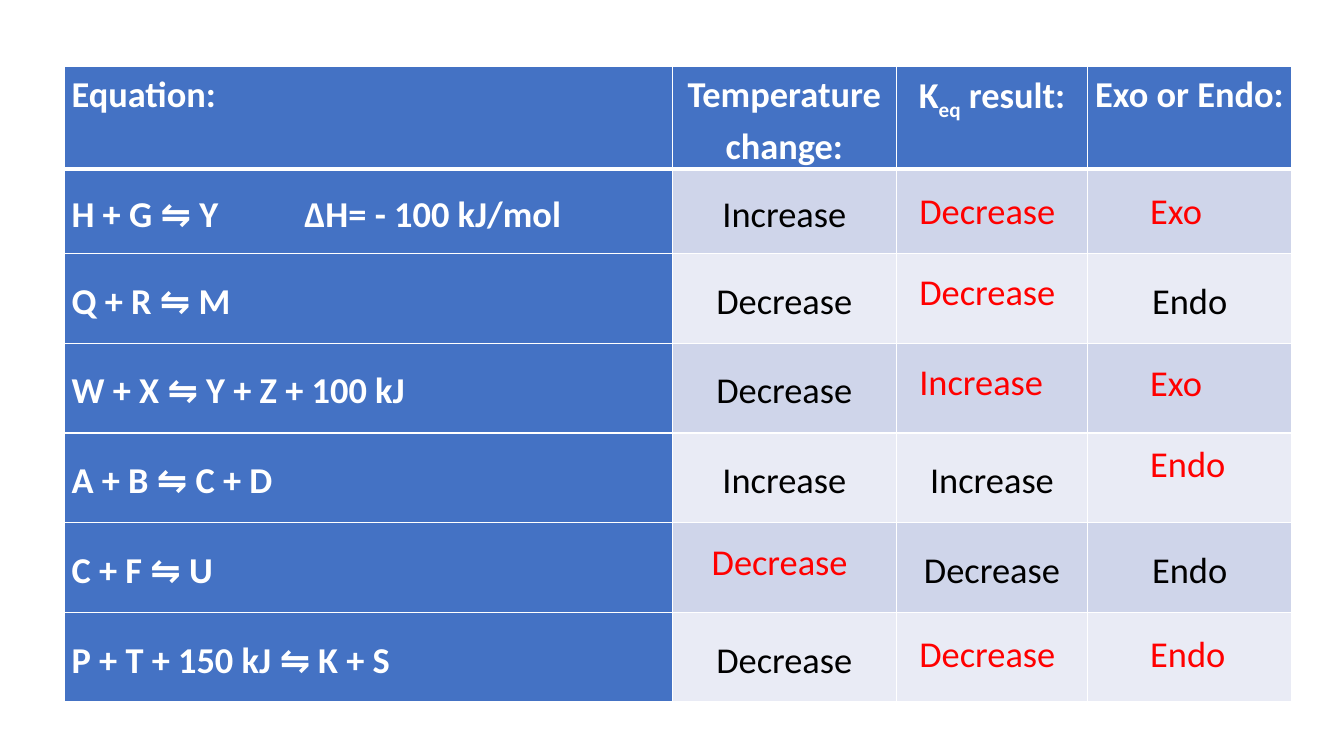
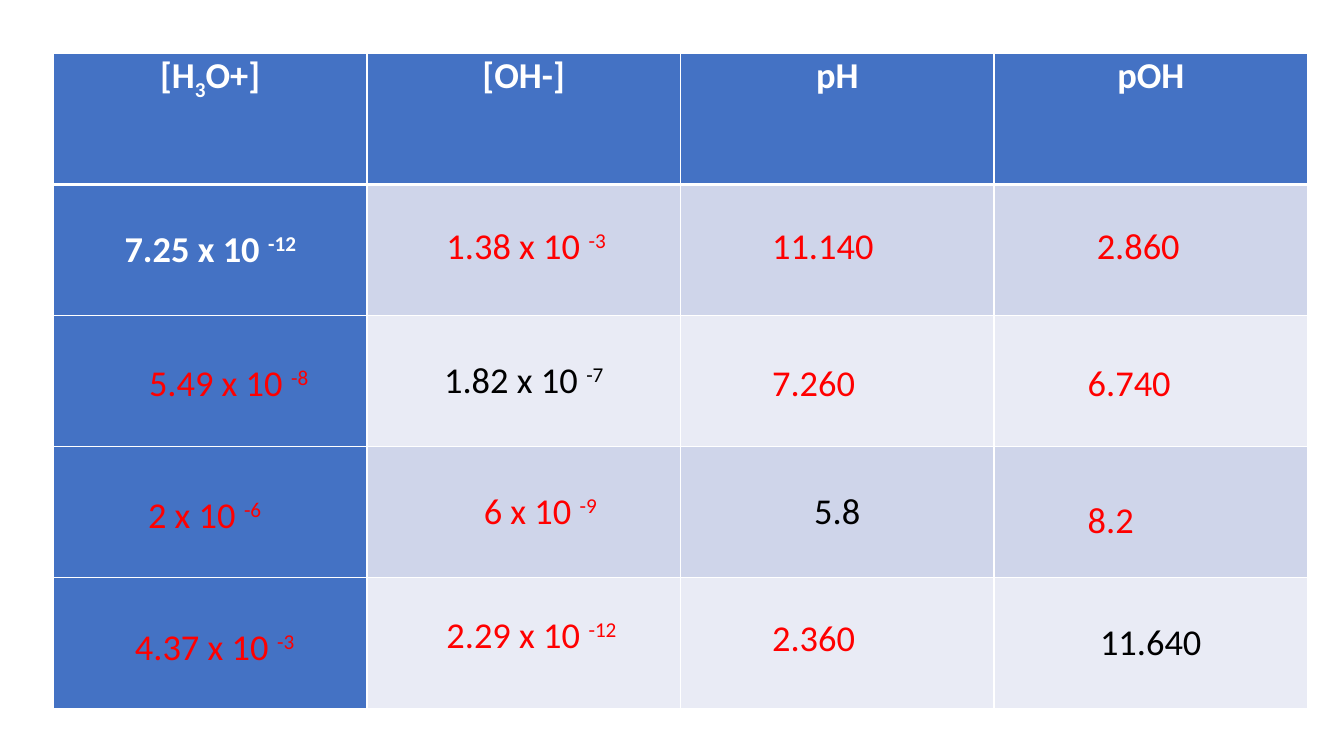
from dataclasses import dataclass
from itertools import accumulate

from lxml.etree import SubElement as Sub
from pptx import Presentation
from pptx.dml.color import RGBColor as Rgb
from pptx.enum.text import MSO_ANCHOR as Anchor, PP_ALIGN as Align
from pptx.oxml.ns import qn
from pptx.util import Emu, Inches, Pt


@dataclass(frozen=True)
class Theme:
    font: str = "Calibri"
    size: int = 26
    head: str = "4472C4"
    odd: str = "CFD5EA"
    even: str = "E9EBF5"
    white: str = "FFFFFF"
    ink: str = "000000"
    key: str = "FF0000"
    thin: int = 1
    thick: int = 3


@dataclass(frozen=True)
class Answer:
    """Red text laid over a cell, offset from the cell's top left corner."""
    text: str
    dx: float
    dy: float
    width: float


@dataclass(frozen=True)
class Grid:
    left: float
    top: float
    cols: list
    rows: list
    cells: list
    first: Align
    space: float = 1.0
    tab: float = 0


LOOK = Theme()
SHIFT = {"_": "-25000", "^": "30000"}


def write(par, text, color, bold=False):
    """Fill a paragraph; a part after | that starts with _ or ^ is lowered or raised."""
    for part in text.split("|"):
        run = par.add_run()
        run.text = part.lstrip("_^")
        font = run.font
        font.name, font.size, font.bold = LOOK.font, Pt(LOOK.size), bold
        font.color.rgb = Rgb.from_string(color)
        if part[0] in SHIFT:
            run._r.get_or_add_rPr().set("baseline", SHIFT[part[0]])


def edge(cell, row):
    """Draw the white cell borders, heavy below the header."""
    heavy = {0: "lnB", 1: "lnT"}.get(row)
    props = cell._tc.get_or_add_tcPr()
    for side in ("lnL", "lnR", "lnT", "lnB"):
        width = LOOK.thick if side == heavy else LOOK.thin
        line = Sub(props, qn(f"a:{side}"), w=str(Pt(width)))
        Sub(Sub(line, qn("a:solidFill")), qn("a:srgbClr"), val=LOOK.white)


def style(cell, row, col):
    cell.margin_left = cell.margin_right = Inches(0.07)
    cell.margin_top = cell.margin_bottom = 0
    cell.vertical_anchor = Anchor.MIDDLE if row else Anchor.TOP
    edge(cell, row)
    band = LOOK.odd if row % 2 else LOOK.even
    cell.fill.solid()
    cell.fill.fore_color.rgb = Rgb.from_string(band if row and col else LOOK.head)


def label(cell, grid, row, col, text):
    par = cell.text_frame.paragraphs[0]
    par.alignment = Align.CENTER if col else grid.first
    par.line_spacing = grid.space
    if "\t" in text:
        tabs = Sub(par._p.get_or_add_pPr(), qn("a:tabLst"))
        Sub(tabs, qn("a:tab"), pos=str(Inches(grid.tab)), algn="l")
    strong = not (row and col)
    write(par, text, LOOK.white if strong else LOOK.ink, strong)


def reply(slide, ans, x, y):
    box = slide.shapes.add_textbox(
        Inches(x + ans.dx), Inches(y + ans.dy), Inches(ans.width), Inches(0.54))
    box.text_frame.word_wrap = True
    write(box.text_frame.paragraphs[0], ans.text, LOOK.key)


def build(deck, grid):
    slide = deck.slides.add_slide(deck.slide_layouts[6])
    table = slide.shapes.add_table(
        len(grid.rows), len(grid.cols), Inches(grid.left), Inches(grid.top),
        Inches(sum(grid.cols)), Inches(sum(grid.rows))).table
    table.first_col = True
    for col, width in zip(table.columns, grid.cols):
        col.width = Inches(width)
    for row, height in zip(table.rows, grid.rows):
        row.height = Inches(height)
    lefts = list(accumulate(grid.cols, initial=grid.left))
    tops = list(accumulate(grid.rows, initial=grid.top))
    for r, line in enumerate(grid.cells):
        for c, item in enumerate(line):
            cell = table.cell(r, c)
            style(cell, r, c)
            if isinstance(item, Answer):
                reply(slide, item, lefts[c], tops[r])
            else:
                label(cell, grid, r, c, item)


def trend(text, dy, dx=0.13):
    return Answer(text, dx, dy, 1.74)


def heat(text, dy):
    return Answer(text, 0.52, dy, 1.07)


def value(text, dy, dx=0.81):
    return Answer(text, dx, dy, 1.26)


SHIFTS = Grid(
    0.64, 0.66, [6.03, 2.22, 1.9, 2.02], [0.95, 0.84] + [0.89] * 5,
    [
        ["Equation:", "Temperature change:", "K|_eq| result:", "Exo or Endo:"],
        ["H + G ⇋ Y\tΔH= - 100 kJ/mol", "Increase",
         trend("Decrease", 0.21), heat("Exo", 0.21)],
        ["Q + R ⇋ M", "Decrease", trend("Decrease", 0.17), "Endo"],
        ["W + X ⇋ Y + Z + 100 kJ", "Decrease",
         trend("Increase", 0.17), heat("Exo", 0.18)],
        ["A + B ⇋ C + D", "Increase", "Increase", heat("Endo", 0.1)],
        ["C + F ⇋ U", trend("Decrease", 0.18, 0.29), "Decrease", "Endo"],
        ["P + T + 150 kJ ⇋ K + S", "Decrease",
         trend("Decrease", 0.2), heat("Endo", 0.2)],
    ], Align.LEFT, 1.15, 2.31)

ACIDS = Grid(
    0.53, 0.53, [3.11] * 4, [1.3] * 5,
    [
        ["[H|_3|O+]", "[OH-]", "pH", "pOH"],
        ["7.25 x 10 |^-12", Answer("1.38 x 10 |^-3", 0.69, 0.33, 1.99),
         value("11.140", 0.33), value("2.860", 0.33, 0.92)],
        [Answer("5.49 x 10 |^-8", 0.85, 0.39, 1.91), "1.82 x 10 |^-7",
         value("7.260", 0.39), value("6.740", 0.39, 0.83)],
        [Answer("2 x 10 |^-6", 0.84, 0.4, 1.56),
         Answer("6 x 10 |^-9", 1.06, 0.36, 1.56),
         "5.8", value("8.2", 0.45, 0.83)],
        [Answer("4.37 x 10 |^-3", 0.71, 0.41, 1.83),
         Answer("2.29 x 10 |^-12", 0.69, 0.29, 2.23),
         value("2.360", 0.32), "11.640"],
    ], Align.CENTER)


def main():
    deck = Presentation()
    deck.slide_width, deck.slide_height = Inches(13.33), Inches(7.5)
    for grid in (SHIFTS, ACIDS):
        build(deck, grid)
    deck.save("out.pptx")


if __name__ == "__main__":
    main()
